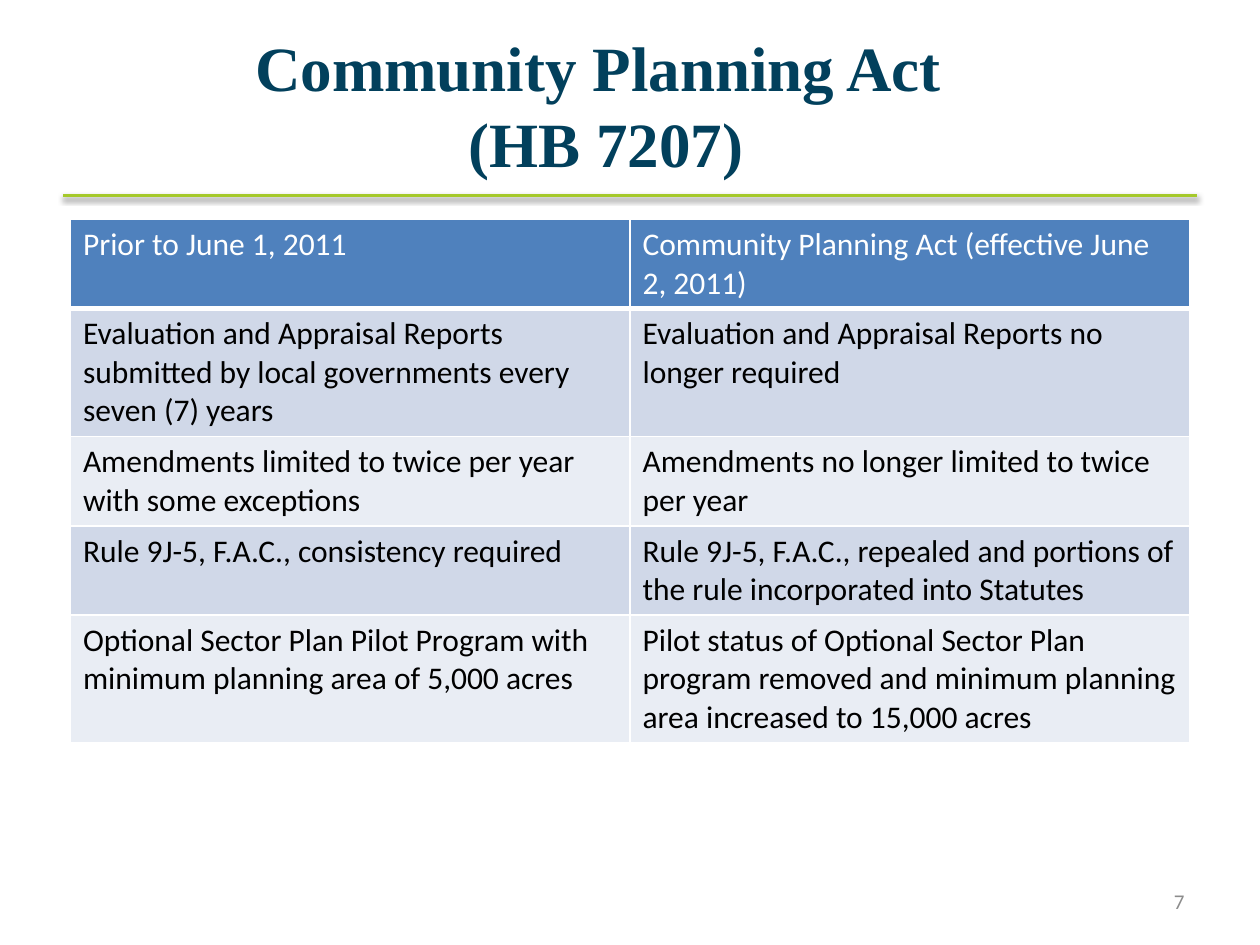
from lxml.etree import SubElement
from pptx import Presentation
from pptx.dml.color import RGBColor
from pptx.enum.shapes import MSO_CONNECTOR
from pptx.enum.text import MSO_ANCHOR, MSO_AUTO_SIZE, PP_ALIGN
from pptx.oxml import parse_xml
from pptx.oxml.ns import nsdecls, qn
from pptx.util import Cm, Pt

WHITE = RGBColor(0xFF, 0xFF, 0xFF)
BLACK = RGBColor(0, 0, 0)
NAVY = RGBColor(0x02, 0x40, 0x5C)
LIME = RGBColor(0xA5, 0xC9, 0x2B)
GREY = RGBColor(0x8C, 0x8C, 0x8C)
BLUE = RGBColor(0x4F, 0x81, 0xBD)
BANDS = [RGBColor(0xD0, 0xD8, 0xE8), RGBColor(0xE9, 0xED, 0xF4)]

ROWS = [
    ("Prior to June 1, 2011",
     "Community Planning Act (effective June 2, 2011)"),
    ("Evaluation and Appraisal Reports submitted by local governments every seven (7) years",
     "Evaluation and Appraisal Reports no longer required"),
    ("Amendments limited to twice per year with some exceptions",
     "Amendments no longer limited to twice per year"),
    ("Rule 9J-5, F.A.C., consistency required",
     "Rule 9J-5, F.A.C., repealed and portions of the rule incorporated into Statutes"),
    ("Optional Sector Plan Pilot Program with minimum planning area of 5,000 acres",
     "Pilot status of Optional Sector Plan program removed and minimum planning area "
     "increased to 15,000 acres"),
]
HEIGHTS = [1.8, 2.58, 1.8, 1.8, 2.58]


def add_run(para, text, size, color, face="Calibri", bold=False):
    run = para.add_run()
    run.text = text
    font = run.font
    font.size, font.name, font.bold = Pt(size), face, bold
    font.color.rgb = color


def add_title(slide, lines):
    title = slide.shapes.title
    title.left, title.top = Cm(1.42), Cm(0.71)
    title.width, title.height = Cm(21.59), Cm(2.79)
    frame = title.text_frame
    frame.word_wrap = True
    frame.auto_size = MSO_AUTO_SIZE.NONE
    frame.vertical_anchor = MSO_ANCHOR.MIDDLE
    for i, line in enumerate(lines):
        para = frame.add_paragraph() if i else frame.paragraphs[0]
        para.alignment = PP_ALIGN.CENTER
        para.space_before = Pt(0)
        add_run(para, line, 36, NAVY, "Times New Roman", True)


def add_rule(slide):
    rule = slide.shapes.add_connector(
        MSO_CONNECTOR.STRAIGHT, Cm(1.27), Cm(3.94), Cm(24.13), Cm(3.94))
    rule.line.color.rgb = LIME
    rule.line.width = Pt(2)
    rule._element.spPr.append(parse_xml(
        f'<a:effectLst {nsdecls("a")}>'
        f'<a:outerShdw blurRad="{Pt(3.1)}" dist="{Pt(1.6)}" dir="5400000" rotWithShape="0">'
        '<a:srgbClr val="000000"><a:alpha val="38000"/></a:srgbClr>'
        '</a:outerShdw></a:effectLst>'))


def add_edge(cell, side, width):
    props = cell._tc.get_or_add_tcPr()
    edge = SubElement(props, qn(f"a:ln{side}"), w=str(Pt(width)))
    fill = SubElement(edge, qn("a:solidFill"))
    SubElement(fill, qn("a:srgbClr"), val=str(WHITE))


def add_grid(slide):
    grid = slide.shapes.add_table(
        len(ROWS), 2, Cm(1.42), Cm(4.42), Cm(22.56), Cm(sum(HEIGHTS))).table
    grid.first_row = grid.horz_banding = False
    for r, texts in enumerate(ROWS):
        grid.rows[r].height = Cm(HEIGHTS[r])
        for c, text in enumerate(texts):
            cell = grid.cell(r, c)
            for side in "LRTB":
                add_edge(cell, side, 3 if r == 0 and side == "B" else 1)
            cell.fill.solid()
            cell.fill.fore_color.rgb = BANDS[(r - 1) % 2] if r else BLUE
            add_run(cell.text_frame.paragraphs[0], text, 18, BLACK if r else WHITE)


def add_number(slide, text):
    box = slide.shapes.add_textbox(Cm(18.21), Cm(17.65), Cm(5.92), Cm(1.02))
    frame = box.text_frame
    frame.word_wrap = True
    frame.vertical_anchor = MSO_ANCHOR.MIDDLE
    para = frame.paragraphs[0]
    para.alignment = PP_ALIGN.RIGHT
    add_run(para, text, 12, GREY)


def main():
    deck = Presentation()
    deck.slide_width, deck.slide_height = Cm(25.4), Cm(19.05)
    slide = deck.slides.add_slide(deck.slide_layouts[5])
    add_rule(slide)
    add_number(slide, "7")
    add_title(slide, ["Community Planning Act ", "(HB 7207)"])
    add_grid(slide)
    deck.save("out.pptx")


if __name__ == "__main__":
    main()
